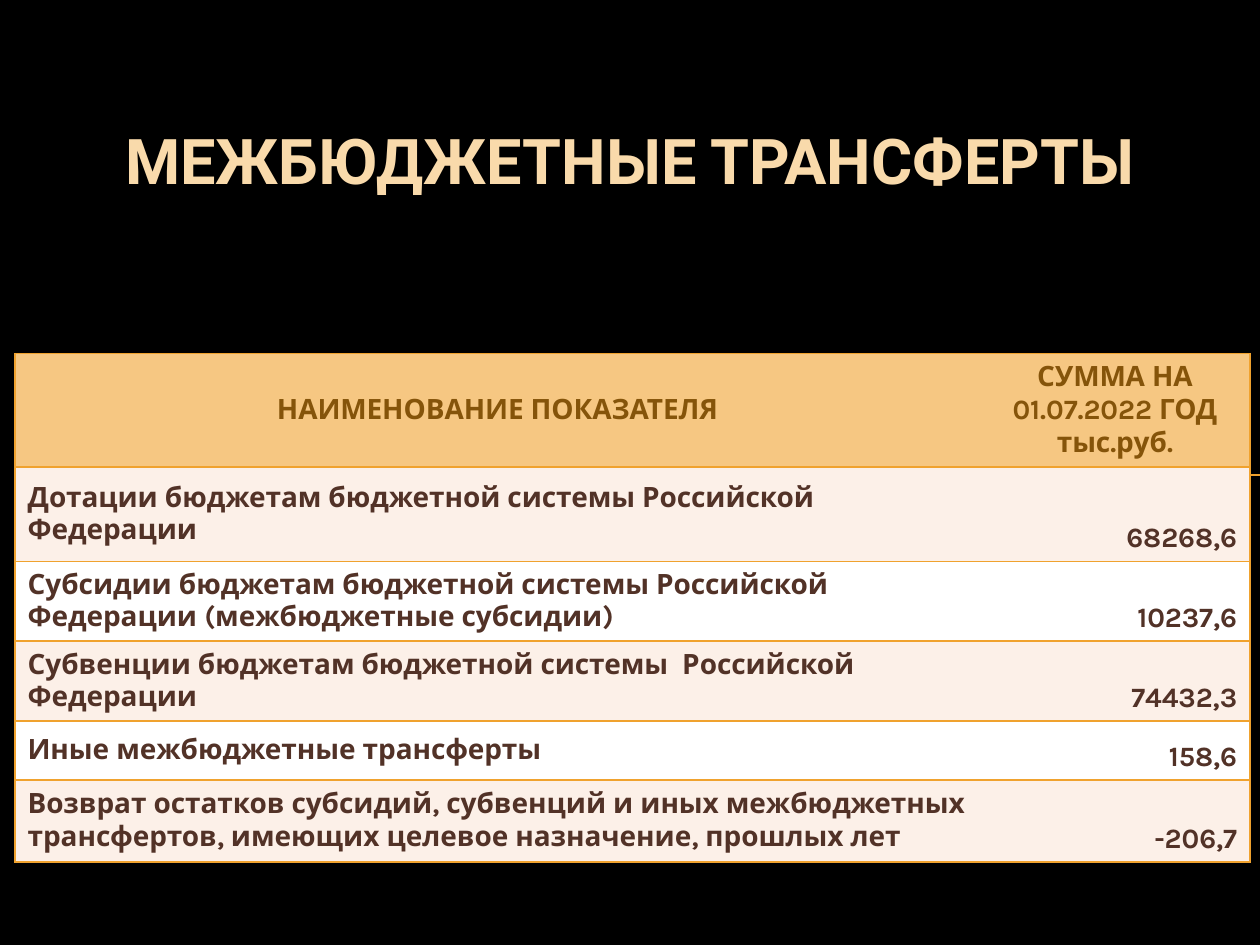
from lxml import etree
from pptx import Presentation
from pptx import util as u
from pptx.dml.color import RGBColor
from pptx.enum import shapes, text
from pptx.oxml.ns import qn

ORANGE = "F0A22E"
BROWN = "523227"
ROWS = [
    ("Дотации бюджетам бюджетной системы Российской Федерации", "68268,6", 54),
    ("Субсидии бюджетам бюджетной системы Российской Федерации (межбюджетные субсидии)", "10237,6", 45.3),
    ("Субвенции бюджетам бюджетной системы  Российской Федерации", "74432,3", 45.3),
    ("Иные межбюджетные трансферты", "158,6", 33.8),
    ("Возврат остатков субсидий, субвенций и иных межбюджетных трансфертов, "
     "имеющих целевое назначение, прошлых лет", "-206,7", 46.8),
]


def rgb(value):
    return RGBColor.from_string(value)


def write(tf, lines, size=16, font="Karla", color=BROWN, align="LEFT", anchor="MIDDLE"):
    tf.word_wrap = True
    tf.vertical_anchor = getattr(text.MSO_ANCHOR, anchor)
    for i, line in enumerate(lines.split("\n")):
        p = tf.paragraphs[0] if i == 0 else tf.add_paragraph()
        p.alignment = getattr(text.PP_ALIGN, align)
        r = p.add_run()
        r.text = line
        r.font.name, r.font.size, r.font.bold = font, u.Pt(size), True
        r.font.color.rgb = rgb(color)


def add_title(s, title):
    sp = s.shapes.add_textbox(u.Pt(0), u.Pt(66), u.Pt(720), u.Pt(142))
    write(sp.text_frame, title, size=36, font="Roboto", color="F9DAAB",
          align="CENTER", anchor="TOP")


def add_rule(s, x1, x2, y):
    ln = s.shapes.add_connector(shapes.MSO_CONNECTOR.STRAIGHT,
                                u.Pt(x1), u.Pt(y), u.Pt(x2), u.Pt(y))
    ln.line.color.rgb = rgb(ORANGE)
    ln.line.width = u.Pt(0.75)
    etree.SubElement(ln._element.spPr, qn("a:effectLst"))


def set_borders(cell, sides):
    tcPr = cell._tc.get_or_add_tcPr()
    for side in "LRTB":
        ln = etree.SubElement(tcPr, qn("a:ln" + side), w=str(u.Pt(1)))
        if side in sides:
            fill = etree.SubElement(ln, qn("a:solidFill"))
            etree.SubElement(fill, qn("a:srgbClr"), val=ORANGE)
        else:
            etree.SubElement(ln, qn("a:noFill"))


def fill_cell(cell, lines, fill, sides, **fmt):
    set_borders(cell, sides)
    cell.fill.solid()
    cell.fill.fore_color.rgb = rgb(fill)
    write(cell.text_frame, lines, **{**fmt, "anchor": "MIDDLE"})
    cell.vertical_anchor = getattr(text.MSO_ANCHOR, fmt.get("anchor", "MIDDLE"))


def add_transfers(s):
    heights = [46.8] + [row[2] for row in ROWS]
    tb = s.shapes.add_table(len(heights), 2, u.Pt(8.6), u.Pt(202),
                            u.Pt(705.6), u.Pt(sum(heights))).table
    for col, width in zip(tb.columns, (551.5, 154.1)):
        col.width = u.Pt(width)
    for row, height in zip(tb.rows, heights):
        row.height = u.Pt(height)
    head = {"fill": "F6C782", "color": "85540A", "align": "CENTER"}
    fill_cell(tb.cell(0, 0), "НАИМЕНОВАНИЕ ПОКАЗАТЕЛЯ", sides="LTB", **head)
    fill_cell(tb.cell(0, 1), "СУММА НА 01.07.2022 ГОД\nтыс.руб.", sides="RTB", **head)
    for i, (name, amount, _) in enumerate(ROWS, 1):
        fill = "FCF0E8" if i % 2 else "FFFFFF"
        fill_cell(tb.cell(i, 0), name, fill, "LTB")
        fill_cell(tb.cell(i, 1), amount, fill, "RTB", align="RIGHT", anchor="BOTTOM")


def main():
    prs = Presentation()
    prs.slide_width, prs.slide_height = u.Pt(720), u.Pt(540)
    s = prs.slides.add_slide(prs.slide_layouts[6])
    s.background.fill.solid()
    s.background.fill.fore_color.rgb = rgb("000000")
    add_rule(s, 40, 720, 271.5)
    add_title(s, "МЕЖБЮДЖЕТНЫЕ ТРАНСФЕРТЫ")
    add_transfers(s)
    prs.save("out.pptx")


if __name__ == "__main__":
    main()
